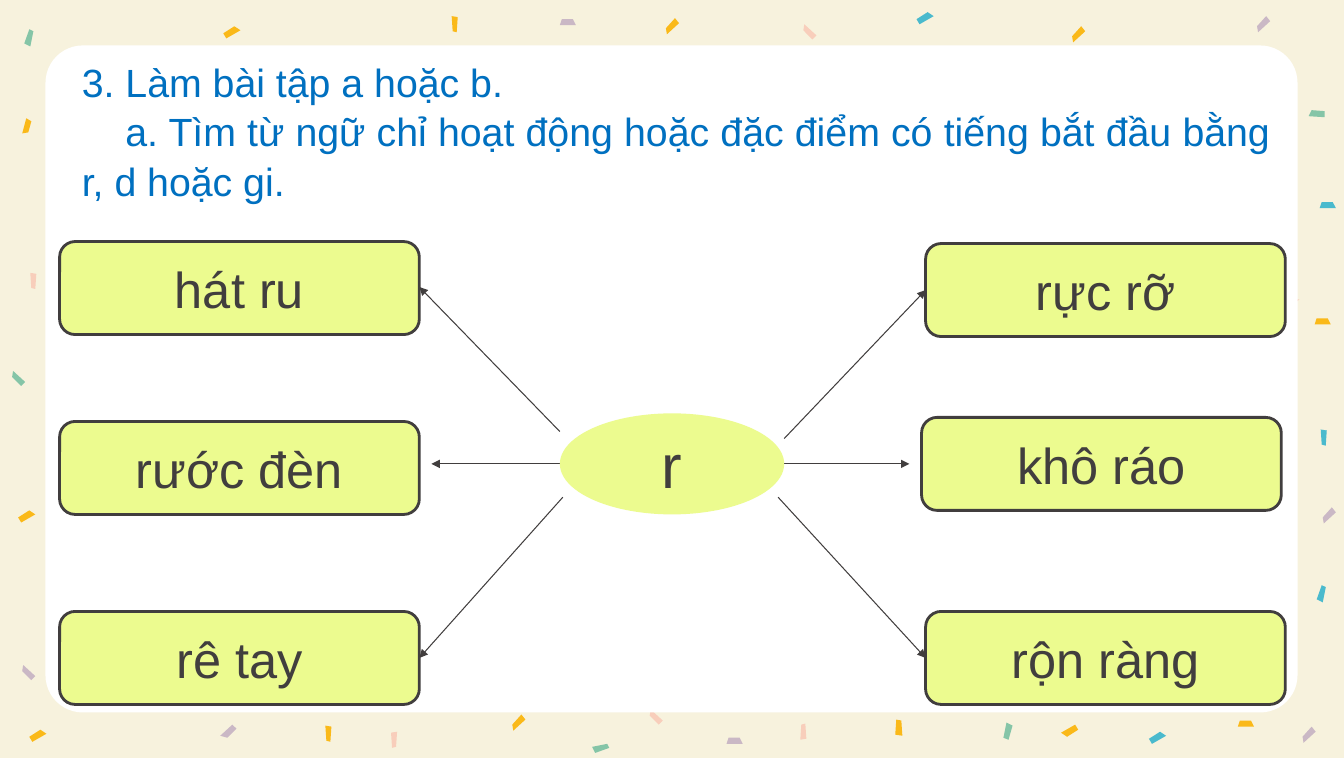
import pptx
import pptx.dml.color
import pptx.enum.dml
import pptx.enum.shapes
import pptx.enum.text
import pptx.oxml
import pptx.oxml.ns
import pptx.util

RGB = pptx.dml.color.RGBColor
SHAPE = pptx.enum.shapes.MSO_SHAPE
ALIGN = pptx.enum.text.PP_ALIGN
ANCHOR = pptx.enum.text.MSO_ANCHOR

PX = 9144  # EMU in one px, 100 px to the inch
FONT = "Arial"
CREAM = RGB(0xF7, 0xF2, 0xDD)
WHITE = RGB(0xFF, 0xFF, 0xFF)
BLUE = RGB(0x00, 0x70, 0xC0)
LIME = RGB(0xEC, 0xFB, 0x8F)
INK = RGB(0x41, 0x3E, 0x3E)
AMBER = RGB(0xFA, 0xB9, 0x19)
PINK = RGB(0xF8, 0xCE, 0xBB)
GREEN = RGB(0x85, 0xC5, 0xA7)
MAUVE = RGB(0xCA, 0xB8, 0xC5)
TEAL = RGB(0x4A, 0xBA, 0xCD)

# Each outline is given around its centre, followed by the centres that use it.
CONFETTI = [
    ([(-6, -3), (5, -3), (8, 3), (-8, 3)],
     [(562, 22, MAUVE), (1314, 203, TEAL), (1309, 318, AMBER),
      (727, 733, MAUVE), (1233, 716, AMBER)]),
    ([(8, -2), (-5, -3), (-8, 3), (8, 4)],
     [(1303, 112, GREEN)]),
    ([(4, 8), (-5, -1), (-4, -7), (8, 4)],
     [(800, 31, PINK), (17, 374, GREEN), (27, 665, MAUVE), (648, 709, PINK)]),
    ([(4, -8), (-5, 2), (-4, 8), (8, -3)],
     [(664, 26, AMBER), (1066, 34, AMBER), (1249, 24, MAUVE),
      (1314, 510, MAUVE), (512, 715, AMBER), (1294, 727, MAUVE)]),
    ([(8, -3), (-1, 6), (-8, 4), (4, -7)],
     [(226, 724, MAUVE)]),
    ([(-8, 2), (3, -5), (9, -1), (-5, 7)],
     [(229, 31, AMBER), (915, 17, TEAL), (26, 510, AMBER),
      (37, 727, AMBER), (1145, 729, TEAL)]),
    ([(9, -2), (-2, 5), (-8, 1), (6, -7)],
     [(1058, 724, AMBER)]),
    ([(3, -7), (2, 8), (-2, 7), (-3, -8)],
     [(450, 24, AMBER), (33, 278, PINK), (325, 726, AMBER), (1310, 433, TEAL)]),
    ([(-3, -7), (-2, 8), (2, 7), (3, -8)],
     [(390, 732, PINK)]),
    ([(3, 8), (2, -7), (-2, -6), (-3, 9)],
     [(795, 723, PINK)]),
    ([(-4, 7), (-3, -8), (2, -7), (3, 8)],
     [(890, 720, AMBER)]),
    ([(-5, 6), (0, -8), (4, -6), (1, 9)],
     [(29, 37, GREEN), (1308, 587, TEAL)]),
    ([(4, -5), (0, 9), (-5, 7), (-2, -8)],
     [(998, 723, GREEN)]),
    ([(4, -5), (1, 6), (-5, 7), (-1, -8)],
     [(27, 125, AMBER)]),
    ([(-6, 5), (8, 0), (6, -4), (-9, -1)],
     [(595, 740, GREEN)]),
]

# Word, left and top of its box, start and end of its arrow
WORDS = [
    ("hát ru", (59, 239), (554, 427), (415, 284)),
    ("rước đèn", (59, 417), (554, 459), (427, 459)),
    ("rê tay", (59, 605), (557, 492), (415, 651)),
    ("rực rỡ", (916, 241), (776, 434), (916, 287)),
    ("khô ráo", (912, 413), (776, 459), (900, 459)),
    ("rộn ràng", (916, 605), (770, 492), (916, 651)),
]


def emu(*lengths):
    return [pptx.util.Emu(length * PX) for length in lengths]


def paint(shape, fill, outline=None):
    shape.shadow.inherit = False
    shape.fill.solid()
    shape.fill.fore_color.rgb = fill
    if outline is None:
        shape.line.fill.background()
    else:
        shape.line.color.rgb = outline
        shape.line.width = pptx.util.Pt(2)


def add_filled(slide, preset, box, fill, outline=None):
    shape = slide.shapes.add_shape(preset, *emu(*box))
    paint(shape, fill, outline)
    return shape


def add_label(shape, text, size):
    frame = shape.text_frame
    frame.word_wrap = True
    frame.vertical_anchor = ANCHOR.MIDDLE
    label = frame.paragraphs[0]
    label.text = text
    label.alignment = ALIGN.CENTER
    label.font.name = FONT
    label.font.size = pptx.util.Pt(size)
    label.font.color.rgb = INK


def add_backdrop(slide, box):
    """Scatter the confetti, then lay the white card over it in the box."""
    slide.background.fill.solid()
    slide.background.fill.fore_color.rgb = CREAM
    for outline, pieces in CONFETTI:
        for x, y, color in pieces:
            corners = [(x + dx, y + dy) for dx, dy in outline]
            builder = slide.shapes.build_freeform(*corners[0], scale=PX)
            builder.add_line_segments(corners[1:], close=True)
            paint(builder.convert_to_shape(), color)
    add_filled(slide, SHAPE.STAR_5_POINT, (1258, 286, 28, 27), PINK)
    card = add_filled(slide, SHAPE.ROUNDED_RECTANGLE, box, WHITE)
    card.adjustments[0] = 0.056


def add_task(slide, box):
    task = slide.shapes.title
    task.element.getparent().append(task.element)  # in front of the card
    task.left, task.top, task.width, task.height = emu(*box)
    frame = task.text_frame
    frame.text = ("3. Làm bài tập a hoặc b.\n"
                  "a. Tìm từ ngữ chỉ hoạt động hoặc đặc điểm có tiếng "
                  "bắt đầu bằng r, d hoặc gi.")
    frame.word_wrap = True
    frame.auto_size = pptx.enum.text.MSO_AUTO_SIZE.NONE
    frame.vertical_anchor = ANCHOR.TOP
    for line, indent in zip(frame.paragraphs, (0, 43)):
        properties = line._p.get_or_add_pPr()
        properties.set("marL", "0")
        properties.set("indent", str(indent * PX))
        line.alignment = ALIGN.JUSTIFY
        line.line_spacing = 1.05
        line.font.name = FONT
        line.font.size = pptx.util.Pt(28)
        line.font.color.rgb = BLUE


def add_arrow(slide, start, end):
    arrow = slide.shapes.add_connector(
        pptx.enum.shapes.MSO_CONNECTOR.STRAIGHT, *emu(*start, *end))
    arrow.line.color.rgb = INK
    arrow.line.width = pptx.util.Pt(0.75)
    line = arrow.line._get_or_add_ln()
    head = pptx.oxml.ns.qn("a:tailEnd")
    line.append(line.makeelement(head, {"type": "triangle"}))
    properties = line.getparent()
    properties.append(properties.makeelement(pptx.oxml.ns.qn("a:effectLst"), {}))


def add_word_map(slide, hub_box):
    for word, corner, start, end in WORDS:
        add_arrow(slide, start, end)
        word_box = add_filled(slide, SHAPE.ROUNDED_RECTANGLE,
                              (*corner, 356, 92), LIME, INK)
        add_label(word_box, word, 36)
    add_label(add_filled(slide, SHAPE.OVAL, hub_box, LIME), "r", 44)


def main():
    deck = pptx.Presentation()
    deck.slide_width, deck.slide_height = emu(1330, 750)
    slide = deck.slides.add_slide(deck.slide_layouts.get_by_name("Title Only"))
    add_backdrop(slide, (45, 45, 1239, 660))
    add_task(slide, (71, 50, 1196, 151))
    add_word_map(slide, (554, 409, 222, 100))
    deck.save("out.pptx")


if __name__ == "__main__":
    main()
